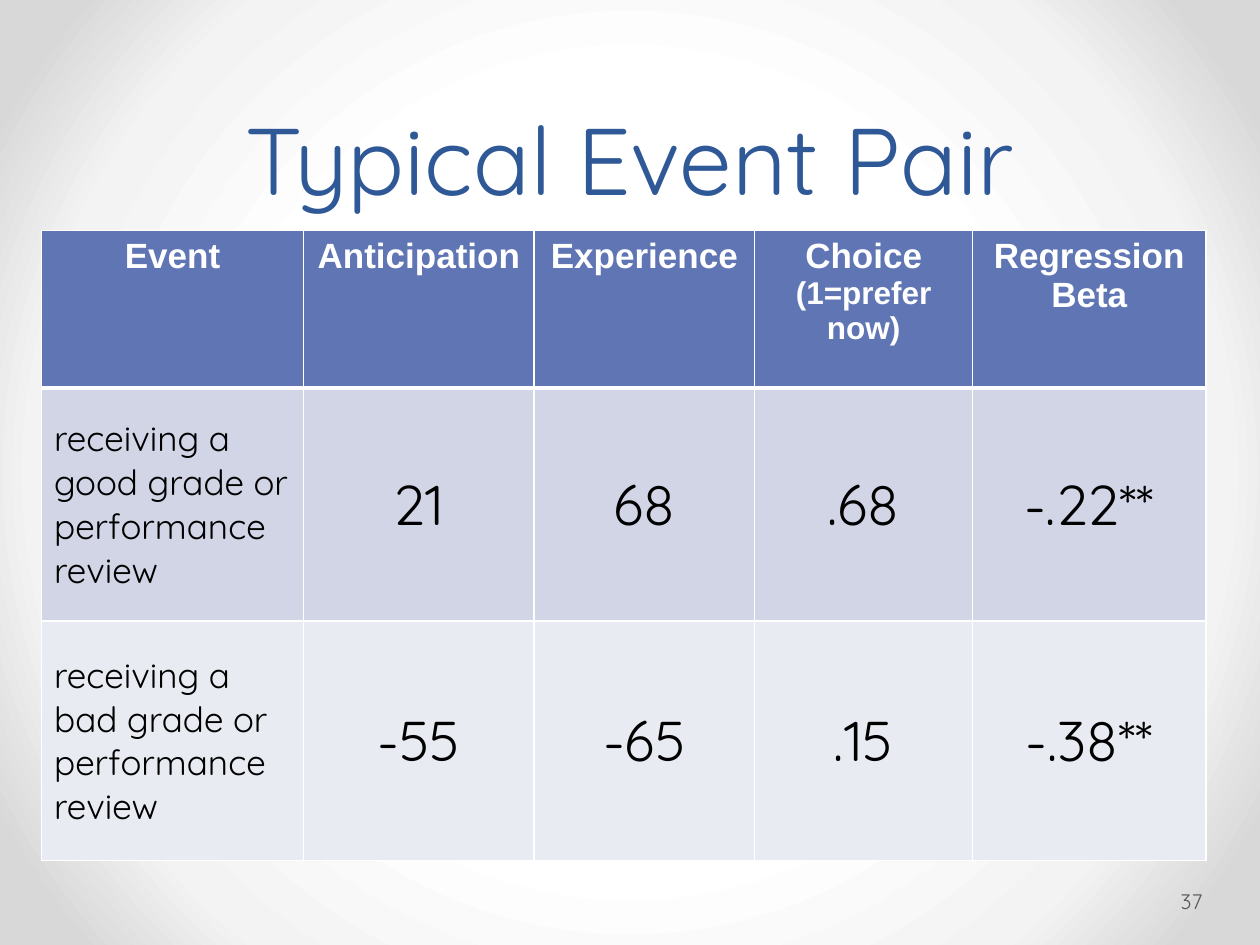
from lxml import etree
from pptx import Presentation, util as u
from pptx.dml.color import RGBColor
from pptx.enum import text as t
from pptx.oxml import parse_xml
from pptx.oxml.ns import nsdecls, qn

WHITE = RGBColor(0xFF, 0xFF, 0xFF)
BLACK = RGBColor(0, 0, 0)
TITLE_BLUE = RGBColor(0x2F, 0x58, 0x97)
HEADER_BLUE = RGBColor(0x60, 0x76, 0xB4)
BAND_DARK = RGBColor(0xD1, 0xD5, 0xE5)
BAND_LIGHT = RGBColor(0xE9, 0xEB, 0xF2)
NUMBER_GREY = RGBColor(0x59, 0x59, 0x59)
SOFT_GREY = RGBColor(0xF3, 0xF3, 0xF3)
EDGE_GREY = RGBColor(0xD8, 0xD8, 0xD8)

GLOW = [(0, WHITE), (50, WHITE), (76, SOFT_GREY), (92, EDGE_GREY), (100, EDGE_GREY)]
COLUMNS = [2.08, 1.83, 1.75, 1.73, 1.85]
ROWS = [1.25, 1.85, 1.9]
HEADINGS = ["Event", "Anticipation", "Experience", "Choice\n(1=prefer now)", "Regression Beta"]
EVENTS = [
    (BAND_DARK, ["receiving a good grade or performance review", "21", "68", ".68", "-.22**"]),
    (BAND_LIGHT, ["receiving a bad grade or performance review", "-55", "-65", ".15", "-.38**"]),
]


def write(frame, words, sizes=(20,), font="Quicksand", color=BLACK, bold=False,
          align=t.PP_ALIGN.CENTER, spacing=None):
    """Fill a text frame with one paragraph per line, each at its own size."""
    frame.word_wrap = True
    frame.text = words
    for i, paragraph in enumerate(frame.paragraphs):
        paragraph.alignment = align
        if spacing:
            paragraph.line_spacing = spacing
        style = paragraph.runs[0].font
        style.name, style.size, style.bold = font, u.Pt(sizes[min(i, len(sizes) - 1)]), bold
        style.color.rgb = color


def add_label(slide, box, words, anchor, left_inset=0.1, right_inset=0.1, **style):
    """Place a text box at the given box in inches."""
    frame = slide.shapes.add_textbox(*map(u.Inches, box)).text_frame
    frame.margin_left, frame.margin_right = u.Inches(left_inset), u.Inches(right_inset)
    frame.vertical_anchor = anchor
    write(frame, words, **style)


def paint_background(slide):
    """Give the slide a radial glow from its centre."""
    slide.background.fill.gradient()
    gradient = slide.background._cSld.find(".//" + qn("a:gradFill"))
    stops = "".join(f'<a:gs pos="{share * 1000}"><a:srgbClr val="{color}"/></a:gs>'
                    for share, color in GLOW)
    gradient.getparent().replace(gradient, parse_xml(
        f'<a:gradFill {nsdecls("a")} rotWithShape="1"><a:gsLst>{stops}</a:gsLst>'
        '<a:path path="circle"><a:fillToRect l="50000" t="50000" r="50000" b="50000"/>'
        '</a:path></a:gradFill>'))


def set_borders(cell, bottom=1, top=1):
    """Draw white cell borders with the given widths in points."""
    properties = cell._tc.get_or_add_tcPr()
    for i, (side, width) in enumerate((("L", 1), ("R", 1), ("T", top), ("B", bottom))):
        line = parse_xml(f'<a:ln{side} {nsdecls("a")} w="{u.Pt(width)}"><a:solidFill>'
                         f'<a:srgbClr val="{WHITE}"/></a:solidFill></a:ln{side}>')
        properties.insert(i, line)


def fill_cell(cell, words, fill, anchor, **style):
    """Colour a table cell and write its text."""
    cell.fill.solid()
    cell.fill.fore_color.rgb = fill
    cell.vertical_anchor = anchor
    write(cell.text_frame, words, **style)


def add_event_table(slide, left, top):
    """Build the table of events with a heading row above banded rows."""
    table = slide.shapes.add_table(
        len(ROWS), len(COLUMNS), u.Inches(left), u.Inches(top),
        u.Inches(sum(COLUMNS)), u.Inches(sum(ROWS))).table
    for column, width in zip(table.columns, COLUMNS):
        column.width = u.Inches(width)
    for row, height in zip(table.rows, ROWS):
        row.height = u.Inches(height)
    for c, heading in enumerate(HEADINGS):
        cell = table.cell(0, c)
        fill_cell(cell, heading, HEADER_BLUE, t.MSO_ANCHOR.TOP, sizes=(20, 18),
                  font="Arial", color=WHITE, bold=True)
        set_borders(cell, bottom=3)
    for r, (band, values) in enumerate(EVENTS, 1):
        for c, value in enumerate(values):
            cell = table.cell(r, c)
            fill_cell(cell, value, band, t.MSO_ANCHOR.MIDDLE, sizes=(32 if c else 20,),
                      align=t.PP_ALIGN.CENTER if c else t.PP_ALIGN.LEFT)
            set_borders(cell, top=3 if r == 1 else 1)


def main():
    """Build and save the slide."""
    deck = Presentation()
    deck.slide_width, deck.slide_height = u.Inches(10), u.Inches(7.5)
    slide = deck.slides.add_slide(deck.slide_layouts[6])
    paint_background(slide)
    add_label(slide, (0.5, 0, 9, 1.75), "Typical Event Pair", t.MSO_ANCHOR.BOTTOM,
              sizes=(54,), color=TITLE_BLUE, spacing=1.07)
    add_event_table(slide, 0.33, 1.83)
    add_label(slide, (9.34, 6.95, 0.61, 0.4), "37", t.MSO_ANCHOR.MIDDLE,
              left_inset=0.03, right_inset=0.05, sizes=(12,), color=NUMBER_GREY,
              align=t.PP_ALIGN.LEFT)
    deck.save("out.pptx")


if __name__ == "__main__":
    main()
